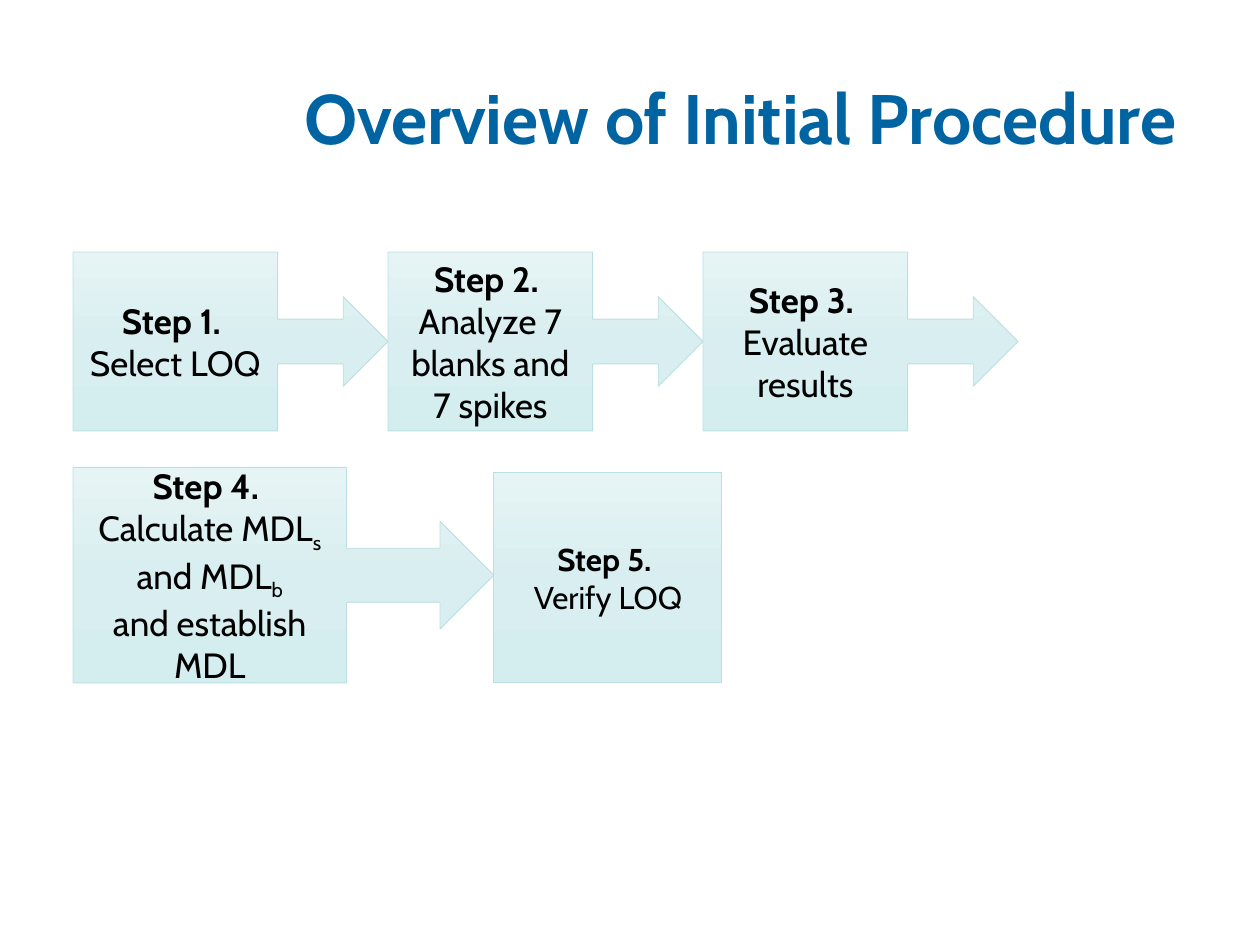
"""Build the slide that outlines the five steps of the initial procedure."""
from copy import deepcopy

from pptx import Presentation
from pptx.dml.color import RGBColor
from pptx.enum.shapes import MSO_SHAPE
from pptx.enum.text import MSO_ANCHOR, PP_ALIGN
from pptx.oxml.ns import qn
from pptx.util import Inches, Pt

CALLOUT = MSO_SHAPE.RIGHT_ARROW_CALLOUT
RECTANGLE = MSO_SHAPE.RECTANGLE
MIDDLE = MSO_ANCHOR.MIDDLE
CENTER = PP_ALIGN.CENTER

FONT = "Cabin"
COLORS = {"title": "0064A2", "text": "000000", "border": "BBE0E3"}
GRADIENT = [(0, "E6F4F5"), (0.5, "D9EEF0"), (1, "D4EDEF")]
TITLE = "Overview of Initial Procedure"
LEFT = 0.58
SUBSCRIPT = "sub"

ROWS = [
    {"bottom": 3.42, "steps": [
        (CALLOUT, 2.5, 1.42, 20, [["Select LOQ"]]),
        (CALLOUT, 2.5, 1.42, 20, [["Analyze 7 blanks and 7 spikes"]]),
        (CALLOUT, 2.5, 1.42, 20, [["Evaluate results"]]),
    ]},
    {"bottom": 5.42, "steps": [
        (CALLOUT, 3.34, 1.71, 20, [
            ["Calculate MDL", ("s", SUBSCRIPT), " and MDL", ("b", SUBSCRIPT)],
            ["and establish MDL"],
        ]),
        (RECTANGLE, 1.81, 1.67, 18, [["Verify LOQ"]]),
    ]},
]


def style_font(font, size, color, bold):
    font.name = FONT
    font.size = Pt(size)
    font.bold = bold
    font.color.rgb = RGBColor.from_string(COLORS[color])


def apply_gradient(shape):
    shape.fill.gradient()
    shape.fill.gradient_angle = 270
    stop_list = shape._element.spPr.find(qn("a:gradFill")).find(qn("a:gsLst"))
    stop_list.append(deepcopy(stop_list[-1]))
    for stop, (position, color) in zip(shape.fill.gradient_stops, GRADIENT):
        stop.position = position
        stop.color.rgb = RGBColor.from_string(color)


def add_title(slide):
    box = slide.shapes.add_textbox(Inches(2.25), Inches(0.3), Inches(7.25), Inches(1.25))
    frame = box.text_frame
    frame.word_wrap = True
    frame.vertical_anchor = MIDDLE
    frame.text = TITLE
    paragraph = frame.paragraphs[0]
    paragraph.alignment = CENTER
    style_font(paragraph.runs[0].font, 40, "title", True)


def add_step(slide, number, kind, left, top, width, height, size, lines):
    shape = slide.shapes.add_shape(kind, Inches(left), Inches(top), Inches(width), Inches(height))
    shape.shadow.inherit = False
    apply_gradient(shape)
    shape.line.color.rgb = RGBColor.from_string(COLORS["border"])
    shape.line.width = Pt(0.5)

    frame = shape.text_frame
    frame.word_wrap = True
    frame.vertical_anchor = MIDDLE
    frame.text = f"Step {number}. "
    for line in lines:
        paragraph = frame.add_paragraph()
        for part in line:
            text, is_subscript = (part, False) if isinstance(part, str) else (part[0], True)
            run = paragraph.add_run()
            run.text = text
            if is_subscript:
                run._r.get_or_add_rPr().set("baseline", "-25000")
    for index, paragraph in enumerate(frame.paragraphs):
        paragraph.alignment = CENTER
        for run in paragraph.runs:
            style_font(run.font, size, "text", index == 0)


def main():
    presentation = Presentation()
    presentation.slide_width = Inches(10)
    presentation.slide_height = Inches(7.5)
    slide = presentation.slides.add_slide(presentation.slide_layouts[6])
    add_title(slide)
    number = 1
    for row in ROWS:
        left = LEFT
        for kind, width, height, size, lines in row["steps"]:
            top = row["bottom"] - height
            add_step(slide, number, kind, left, top, width, height, size, lines)
            left += width
            number += 1
    presentation.save("out.pptx")


if __name__ == "__main__":
    main()
